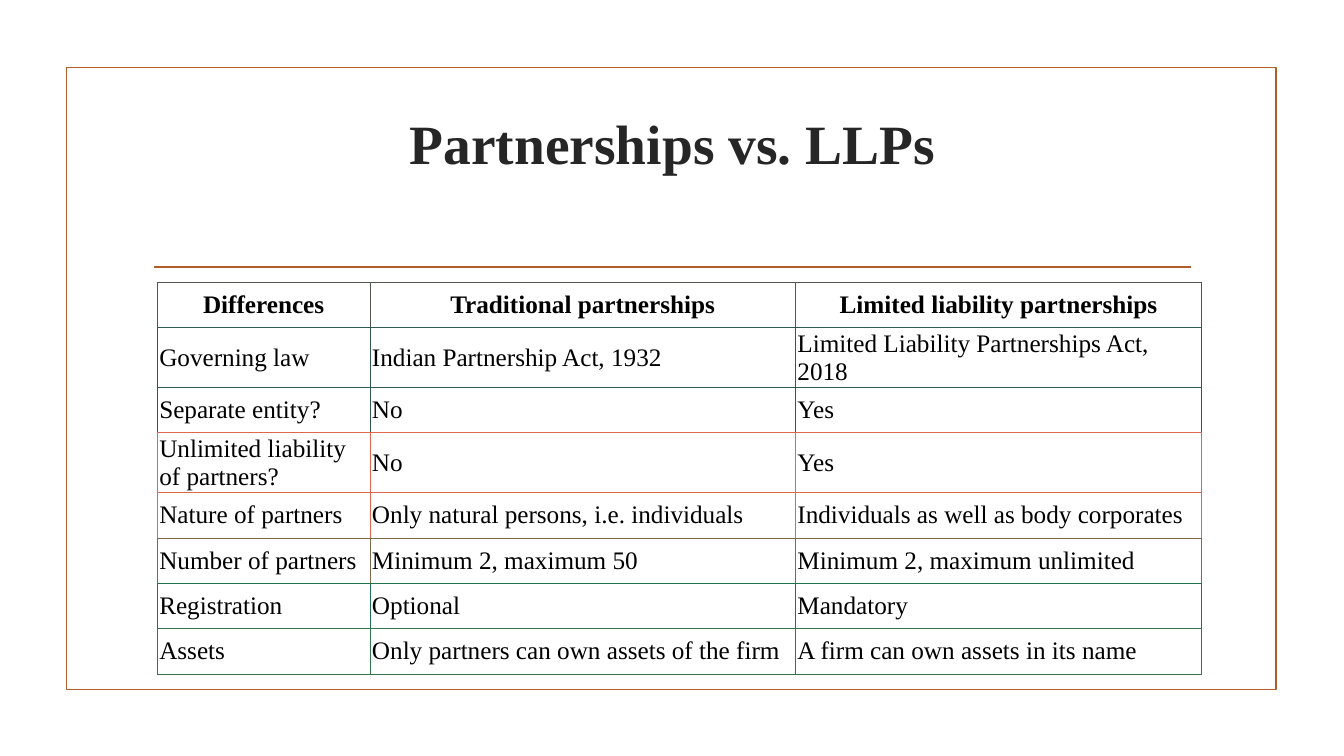
from lxml.etree import SubElement
from pptx import Presentation
from pptx.dml.color import RGBColor
from pptx.enum.shapes import MSO_CONNECTOR, MSO_SHAPE
from pptx.enum.text import MSO_ANCHOR, MSO_AUTO_SIZE, PP_ALIGN
from pptx.oxml.ns import qn
from pptx.util import Inches, Pt

FONT = "Times New Roman"
COLORS = {"accent": "B15E28", "title": "262626", "text": "000000", "cell": "FFFFFF"}
COLUMN_WIDTHS = [2.11, 4.22, 4.03]
ROW_HEIGHT = 0.45

# Border colour of each row, followed by its cells
ROWS = [
    ("50564E", "Differences", "Traditional partnerships", "Limited liability partnerships"),
    ("30584E", "Governing law", "Indian Partnership Act, 1932",
     "Limited Liability Partnerships Act, 2018"),
    ("30584E", "Separate entity?", "No", "Yes"),
    ("E0664D", "Unlimited liability of partners?", "No", "Yes"),
    ("E0664D", "Nature of partners", "Only natural persons, i.e. individuals",
     "Individuals as well as body corporates"),
    ("80694D", "Number of partners", "Minimum 2, maximum 50", "Minimum 2, maximum unlimited"),
    ("20724D", "Registration", "Optional", "Mandatory"),
    ("30774D", "Assets", "Only partners can own assets of the firm",
     "A firm can own assets in its name"),
]


def style_font(paragraph, size, color, bold):
    font = paragraph.font
    font.name, font.size, font.bold = FONT, Pt(size), bold
    font.color.rgb = RGBColor.from_string(COLORS[color])


def add_border(cell, side, color):
    """Draw one cell side (L, R, T or B); call in that order, before the fill."""
    border = SubElement(cell._tc.get_or_add_tcPr(), qn(f"a:ln{side}"), w=str(Pt(0.6)))
    fill = SubElement(border, qn("a:solidFill"))
    SubElement(fill, qn("a:srgbClr"), val=color)


prs = Presentation()
prs.slide_width, prs.slide_height = Inches(13.33), Inches(7.5)
slide = prs.slides.add_slide(prs.slide_layouts[5])
accent = RGBColor.from_string(COLORS["accent"])

# Title
title = slide.shapes.title
title.left, title.top = Inches(1.42), Inches(1.07)
title.width, title.height = Inches(10.5), Inches(1.43)
title.text_frame.text = "Partnerships vs. LLPs\v"
title.text_frame.auto_size = MSO_AUTO_SIZE.NONE
title.text_frame.vertical_anchor = MSO_ANCHOR.MIDDLE
heading = title.text_frame.paragraphs[0]
heading.alignment = PP_ALIGN.CENTER
heading.line_spacing = 0.9
style_font(heading, 39.6, "title", True)

# Frame and rule
frame = slide.shapes.add_shape(
    MSO_SHAPE.RECTANGLE, Inches(0.66), Inches(0.67), Inches(12), Inches(6.17))
frame.shadow.inherit = False
frame.fill.background()
rule = slide.shapes.add_connector(
    MSO_CONNECTOR.STRAIGHT, Inches(1.53), Inches(2.65), Inches(11.81), Inches(2.65))
SubElement(rule._element.spPr, qn("a:effectLst"))
for outlined in (frame, rule):
    outlined.line.color.rgb = accent
    outlined.line.width = Pt(1.25)

# Comparison table
comparison = slide.shapes.add_table(
    len(ROWS), len(COLUMN_WIDTHS), Inches(1.56), Inches(2.8),
    Inches(sum(COLUMN_WIDTHS)), Inches(ROW_HEIGHT * len(ROWS))).table
comparison.first_row = comparison.horz_banding = False
for column, width in zip(comparison.columns, COLUMN_WIDTHS):
    column.width = Inches(width)

for r, (color, *texts) in enumerate(ROWS):
    is_header = r == 0
    # A row's bottom edge takes the colour of the row below
    bottom_color = ROWS[min(r + 1, len(ROWS) - 1)][0]
    for c, text in enumerate(texts):
        cell = comparison.cell(r, c)
        cell.text = text
        cell.vertical_anchor = MSO_ANCHOR.MIDDLE
        cell.margin_left = cell.margin_right = Inches(0.02)
        cell.margin_top = cell.margin_bottom = Inches(0.02)
        for side in "LRT":
            add_border(cell, side, color)
        add_border(cell, "B", bottom_color)
        cell.fill.solid()
        cell.fill.fore_color.rgb = RGBColor.from_string(COLORS["cell"])
        paragraph = cell.text_frame.paragraphs[0]
        paragraph.alignment = PP_ALIGN.CENTER if is_header else PP_ALIGN.LEFT
        style_font(paragraph, 18, "text", is_header)

prs.save("out.pptx")
